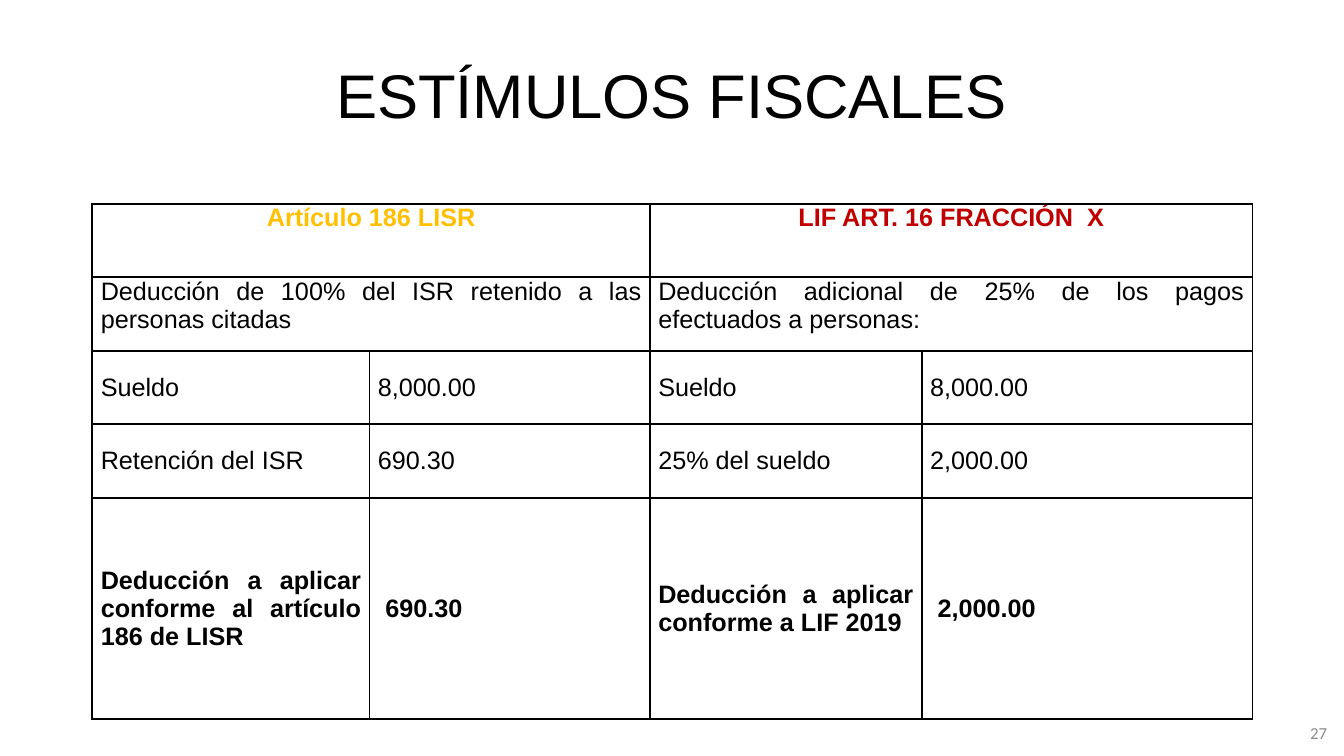
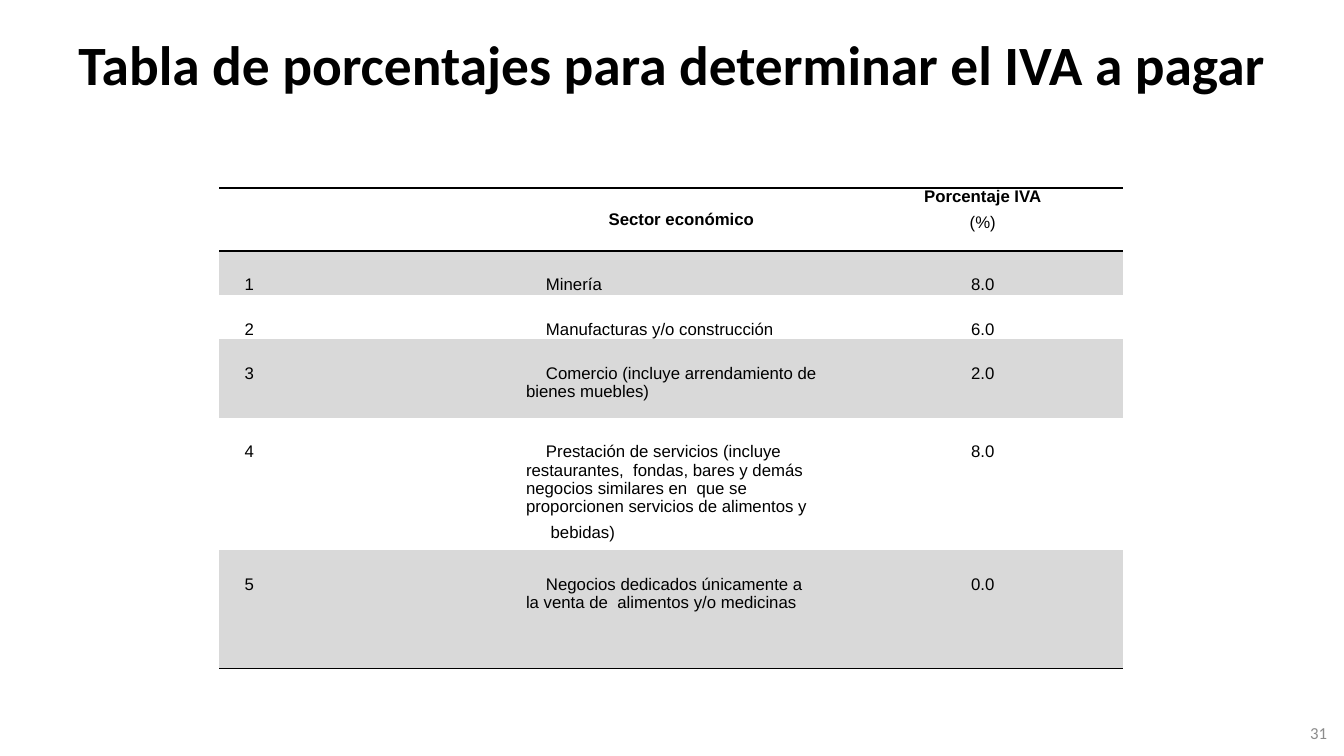
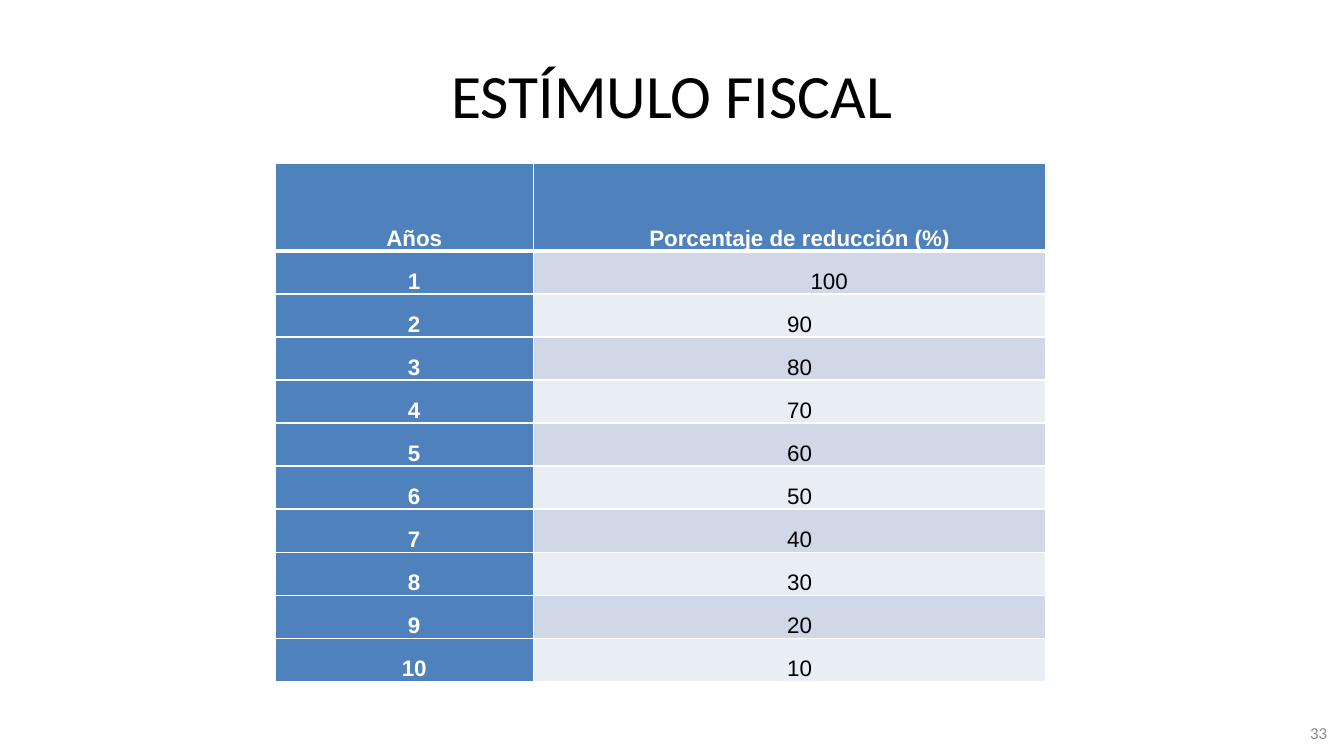
from dataclasses import dataclass, field
from typing import Any

from lxml.etree import SubElement
from pptx import Presentation
from pptx.dml.color import RGBColor
from pptx.enum.text import MSO_ANCHOR as Anchor, PP_ALIGN as Align
from pptx.oxml.ns import qn
from pptx.util import Emu, Pt

PX = 9525
BLACK, WHITE, GREY, NUMBER_GREY = "000000", "FFFFFF", "D9D9D9", "8C8C8C"
GOLD, RED = "FFC000", "C00000"
BLUE, BAND_DARK, BAND_LIGHT = "4F81BD", "D0D8E8", "E9EDF4"

Edges = dict[str, tuple[str, float]]


@dataclass(frozen=True)
class Cell:
    text: str = ""
    fill: str | None = None
    edges: Edges = field(default_factory=dict)
    span: int = 1
    anchor: Any = Anchor.TOP
    top: int = 0
    side: int = 5
    fmt: dict[str, Any] = field(default_factory=dict)


def px(n: float) -> Emu:
    return Emu(round(n * PX))


def rgb(color: str) -> RGBColor:
    return RGBColor.from_string(color)


def write(tf: Any, text: str, *, size: float = 12, font: str = "Arial",
          color: str = BLACK, bold: bool = False, align: Any = Align.LEFT,
          line: float | None = None, before: float = 0, after: float = 0,
          left: int = 0, indent: int = 0, append: bool = False) -> None:
    """Write one paragraph for each line of text."""
    for i, words in enumerate(text.split("\n")):
        p = tf.add_paragraph() if append or i else tf.paragraphs[0]
        p.alignment = align
        p.space_before, p.space_after = Pt(before), Pt(after)
        if line:
            p.line_spacing = Pt(line)
        pPr = p._p.get_or_add_pPr()
        pPr.set("marL", str(px(left)))
        pPr.set("indent", str(px(indent)))
        r = p.add_run()
        r.text = words
        r.font.size, r.font.name, r.font.bold = Pt(size), font, bold
        r.font.color.rgb = rgb(color)


def text_box(slide: Any, text: str, x: int, y: int, w: int, h: int,
             side: int = 0, **fmt: Any) -> None:
    tf = slide.shapes.add_textbox(px(x), px(y), px(w), px(h)).text_frame
    tf.word_wrap = True
    tf.vertical_anchor = Anchor.MIDDLE
    tf.margin_left = tf.margin_right = px(side)
    tf.margin_top = tf.margin_bottom = 0
    write(tf, text, **fmt)


def new_slide(prs: Any, title: str, number: int, *, size: float = 44,
              font: str = "Calibri", bold: bool = False, height: int = 120) -> Any:
    s = prs.slides.add_slide(prs.slide_layouts[6])
    text_box(s, title, 64, 29, 1152, height, size=size, font=font, bold=bold,
             align=Align.CENTER)
    text_box(s, str(number), 975, 679, 299, 38, side=10, font="Calibri",
             color=NUMBER_GREY, align=Align.RIGHT)
    return s


def set_edges(tc: Any, edges: Edges) -> None:
    """Draw the given sides (L, R, T, B) and hide the others."""
    tcPr = tc.get_or_add_tcPr()
    for side in "LRTB":
        ln = SubElement(tcPr, qn(f"a:ln{side}"))
        if side not in edges:
            SubElement(ln, qn("a:noFill"))
            continue
        color, width = edges[side]
        ln.set("w", str(Pt(width)))
        SubElement(SubElement(ln, qn("a:solidFill")), qn("a:srgbClr")).set("val", color)


def add_table(slide: Any, x: int, y: int, cols: list[int], heights: list[int],
              rows: list[list[Cell]]) -> Any:
    frame = slide.shapes.add_table(len(heights), len(cols), px(x), px(y),
                                   px(sum(cols)), px(sum(heights)))
    table = frame.table
    table.first_row = table.horz_banding = False
    for column, width in zip(table.columns, cols):
        column.width = px(width)
    for row, height in zip(table.rows, heights):
        row.height = px(height)
    for i, row_cells in enumerate(rows):
        j = 0
        for item in row_cells:
            if item.span > 1:
                table.cell(i, j).merge(table.cell(i, j + item.span - 1))
            for k in range(j, j + item.span):
                cell = table.cell(i, k)
                cell.margin_left = cell.margin_right = px(item.side)
                cell.margin_top, cell.margin_bottom = px(item.top), 0
                cell.vertical_anchor = item.anchor
                set_edges(cell._tc, item.edges)
                if item.fill:
                    cell.fill.solid()
                    cell.fill.fore_color.rgb = rgb(item.fill)
                else:
                    cell.fill.background()
            if item.text:
                write(table.cell(i, j).text_frame, item.text, **item.fmt)
            j += item.span
    return table


def deductions_slide(prs: Any) -> None:
    s = new_slide(prs, "ESTÍMULOS FISCALES", 27, font="Arial")
    edges = {side: (BLACK, 1.5) for side in "LRTB"}

    def cell(text: str, span: int = 1, **fmt: Any) -> Cell:
        anchor = Anchor.TOP if span > 1 else Anchor.MIDDLE
        return Cell(text, WHITE, edges, span, anchor, side=8,
                    fmt=dict(size=18, before=6, after=6) | fmt)

    heading = dict(span=2, bold=True, align=Align.CENTER)
    label = dict(bold=True, align=Align.JUSTIFY)
    total = dict(bold=True, left=7)
    rows = [
        [cell("Artículo 186 LISR", color=GOLD, **heading),
         cell("LIF ART. 16 FRACCIÓN  X", color=RED, **heading)],
        [cell(text, 2, align=Align.JUSTIFY) for text in (
            "Deducción de 100% del ISR retenido a las personas citadas",
            "Deducción adicional de 25% de los pagos efectuados a personas:")],
        [cell(text) for text in ("Sueldo", "8,000.00", "Sueldo", "8,000.00")],
        [cell(text) for text in
         ("Retención del ISR", "690.30", "25% del sueldo", "2,000.00")],
        [cell("Deducción a aplicar conforme al artículo 186 de LISR", **label),
         cell("690.30", **total),
         cell("Deducción a aplicar conforme a LIF 2019", **label),
         cell("2,000.00", **total)],
    ]
    add_table(s, 88, 194, [264, 267, 259, 315], [70] * 4 + [211], rows)


def vat_slide(prs: Any) -> None:
    s = new_slide(prs, "Tabla de porcentajes para determinar el IVA a pagar", 31,
                  size=39.6, bold=True, height=63)
    sectors = [
        ("Minería", "8.0"),
        ("Manufacturas y/o construcción", "6.0"),
        ("Comercio (incluye arrendamiento de bienes muebles)", "2.0"),
        ("Prestación de servicios (incluye restaurantes,  fondas, bares y demás "
         "negocios similares en  que se proporcionen servicios de alimentos y"
         "\n bebidas)", "8.0"),
        ("Negocios dedicados únicamente a la venta de  alimentos y/o medicinas",
         "0.0"),
    ]
    rule = (BLACK, 1)
    body = dict(line=13.1, after=5, indent=19)
    centred = body | dict(align=Align.CENTER)
    heading = centred | dict(bold=True)
    ruled: Edges = {"T": rule, "B": rule}
    rows = [[Cell(edges=ruled),
             Cell("Sector económico", edges=ruled, anchor=Anchor.MIDDLE, fmt=heading),
             Cell("Porcentaje IVA", edges=ruled, fmt=heading)]]
    for n, (sector, rate) in enumerate(sectors, 1):
        edges: Edges = {}
        if n == 1:
            edges["T"] = rule
        if n == len(sectors):
            edges["B"] = rule
        fill = GREY if n % 2 else None
        rows.append([Cell(text, fill, edges, top=24, fmt=fmt) for text, fmt in
                     ((str(n), body), (sector, body), (rate, centred))])
    table = add_table(s, 209, 179, [287] * 3, [60, 42, 42, 75, 126, 113], rows)
    write(table.cell(0, 2).text_frame, "(%)", append=True, **centred)


def reduction_slide(prs: Any) -> None:
    s = new_slide(prs, "ESTÍMULO FISCAL", 33)
    thin, thick = (WHITE, 1), (WHITE, 3)
    base = dict(size=16, line=10.8, before=1, after=1, indent=19, align=Align.CENTER)
    heading = base | dict(color=WHITE, bold=True)
    hundred = base | dict(align=Align.LEFT, left=240)

    def cell(text: str, fill: str, fmt: dict[str, Any], **edges: Any) -> Cell:
        sides = {side: thin for side in "LRTB"} | edges
        return Cell(text, fill, sides, anchor=Anchor.BOTTOM, fmt=fmt)

    rows = [[cell(text, BLUE, heading, B=thick)
             for text in ("Años", "Porcentaje de reducción (%)")]]
    for year in range(1, 11):
        top = thick if year == 1 else thin
        band = BAND_DARK if year % 2 else BAND_LIGHT
        rows.append([cell(str(year), BLUE, heading, T=top),
                     cell(str(110 - 10 * year), band,
                          hundred if year == 1 else base, T=top)])
    add_table(s, 262, 156, [246, 488], [83] + [41] * 10, rows)


def main() -> None:
    prs = Presentation()
    prs.slide_width, prs.slide_height = px(1280), px(720)
    deductions_slide(prs)
    vat_slide(prs)
    reduction_slide(prs)
    prs.save("out.pptx")


if __name__ == "__main__":
    main()
